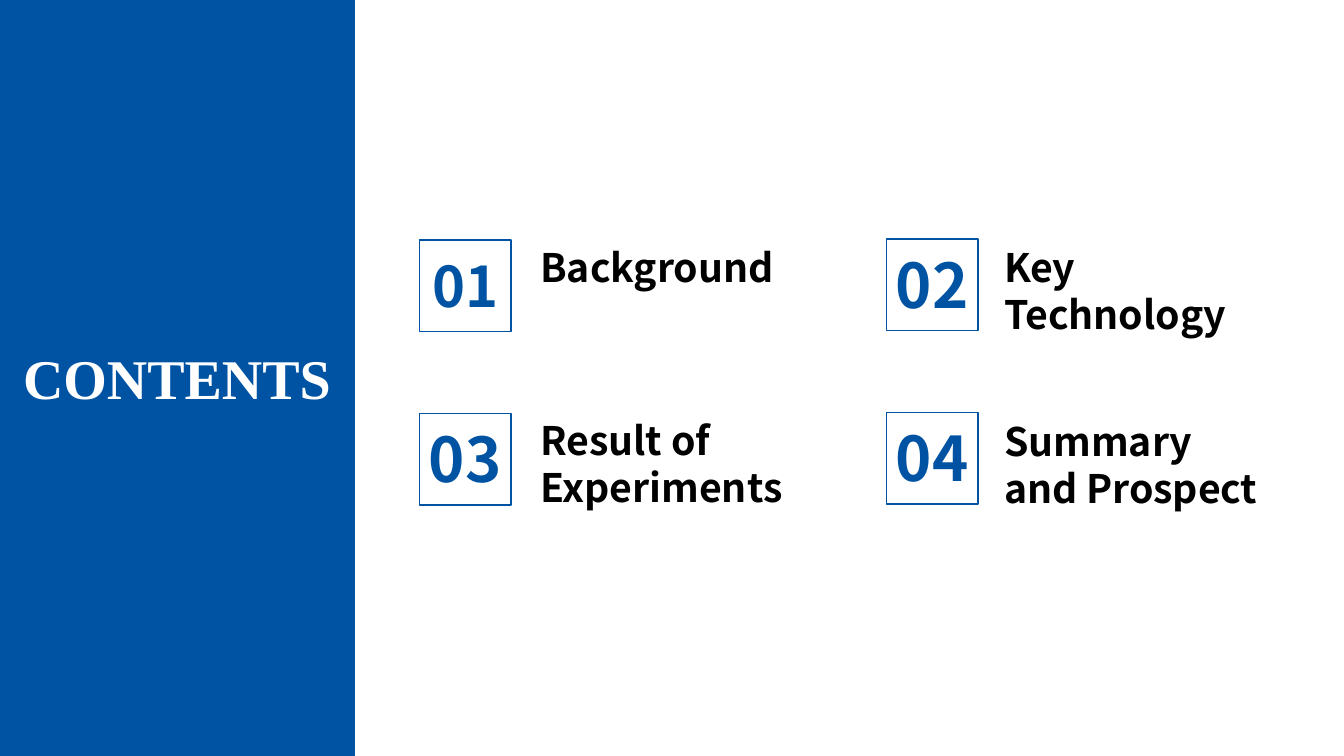
from pptx import Presentation
from pptx.dml.color import RGBColor
from pptx.enum.shapes import MSO_SHAPE as Shape
from pptx.enum.text import MSO_AUTO_SIZE as AutoSize, PP_ALIGN as Align
from pptx.util import Inches, Pt

BLUE = RGBColor(0x00, 0x53, 0xA3)
BLACK = RGBColor(0x00, 0x00, 0x00)
WHITE = RGBColor(0xFF, 0xFF, 0xFF)
SANS = "Noto Sans CJK SC"
SERIF = "Times New Roman"
SQUARE = 0.91

# number, number size, square left and top, title, title top and width
TOPICS = [
    ("01", 40, 4.16, 2.38, "Background", 2.36, 2.62),
    ("02", 44, 8.79, 2.37, "Key Technology", 2.36, 2.62),
    ("03", 44, 4.16, 4.10, "Result of Experiments", 4.08, 2.78),
    ("04", 44, 8.79, 4.09, "Summary and Prospect", 4.09, 2.78),
]
TITLE_LEFT = {4.16: 5.26, 8.79: 9.86}
# number size: box width, height and drop below the top of the square
NUMBER_BOX = {40: (0.91, 0.77, 0.07), 44: (0.98, 0.84, 0.03)}


class ContentsPage:
    def __init__(self, page):
        self.page = page

    def rectangle(self, left, top, width, height, fill=None, line=None):
        box = self.page.shapes.add_shape(
            Shape.RECTANGLE, Inches(left), Inches(top), Inches(width), Inches(height))
        box.shadow.inherit = False
        if fill is None:
            box.fill.background()
        else:
            box.fill.solid()
            box.fill.fore_color.rgb = fill
        if line is None:
            box.line.fill.background()
        else:
            box.line.color.rgb = line
            box.line.width = Pt(1)

    def text(self, words, left, top, width, height, size, color,
             font=SANS, align=Align.LEFT):
        box = self.page.shapes.add_textbox(
            Inches(left), Inches(top), Inches(width), Inches(height))
        frame = box.text_frame
        frame.word_wrap = True
        frame.auto_size = AutoSize.SHAPE_TO_FIT_TEXT
        para = frame.paragraphs[0]
        para.text = words
        para.alignment = align
        para.font.name = font
        para.font.size = Pt(size)
        para.font.bold = True
        para.font.color.rgb = color

    def topic(self, number, size, left, top, title, title_top, title_width):
        """Draw a framed number with its title on the right."""
        title_height = 1.04 if " " in title else 0.57
        self.text(title, TITLE_LEFT[left], title_top, title_width, title_height, 28, BLACK)
        width, height, drop = NUMBER_BOX[size]
        self.text(number, left + (SQUARE - width) / 2, top + drop, width, height,
                  size, BLUE, align=Align.CENTER)
        self.rectangle(left, top, SQUARE, SQUARE, line=BLUE)


def main():
    deck = Presentation()
    deck.slide_width, deck.slide_height = Inches(13.33), Inches(7.5)
    contents = ContentsPage(deck.slides.add_slide(deck.slide_layouts[6]))
    contents.rectangle(0, 0, 3.52, 7.5, fill=BLUE)
    contents.text("CONTENTS", -0.15, 3.36, 3.53, 0.77, 40, WHITE, SERIF, Align.RIGHT)
    for topic in TOPICS:
        contents.topic(*topic)
    deck.save("out.pptx")


if __name__ == "__main__":
    main()
